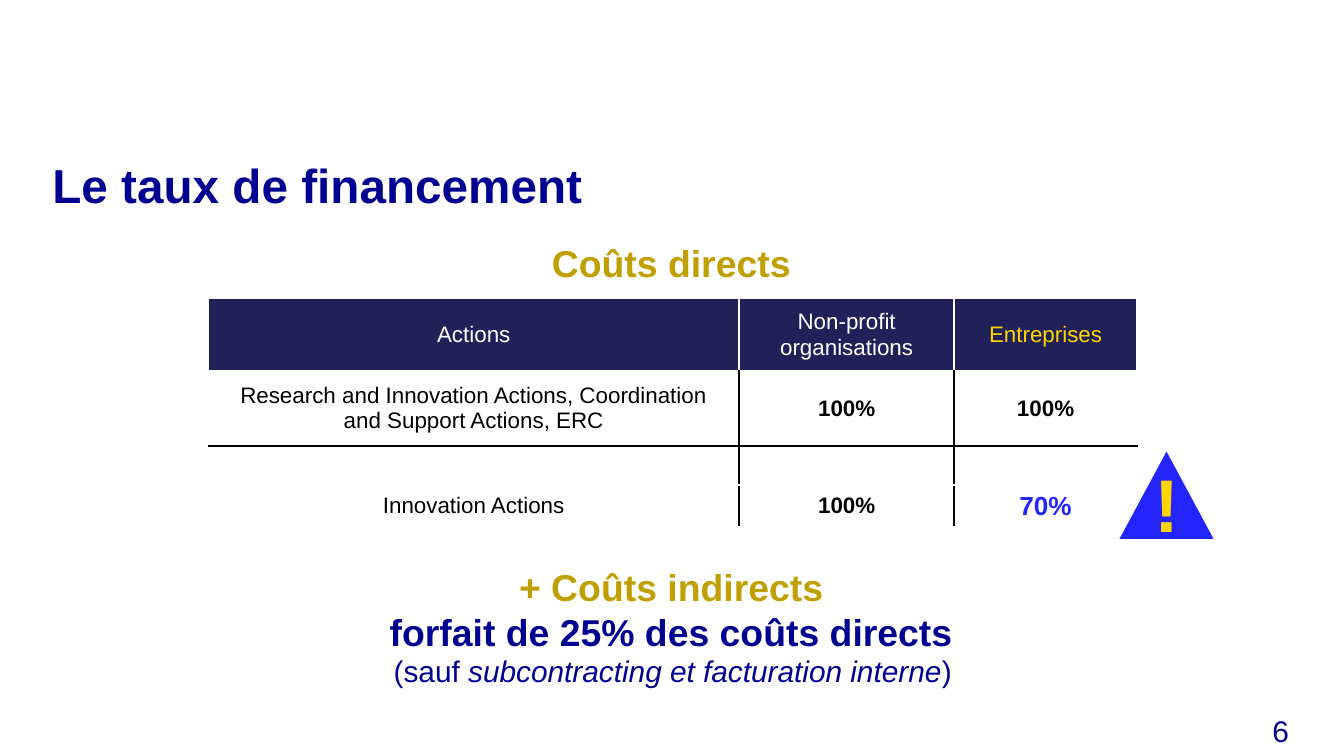
from lxml.etree import SubElement
from pptx import Presentation
from pptx.dml.color import RGBColor
from pptx.enum.shapes import MSO_SHAPE as Shape
from pptx.enum.text import MSO_ANCHOR as Anchor, PP_ALIGN as Align
from pptx.oxml import parse_xml
from pptx.oxml.ns import nsdecls, qn
from pptx.util import Inches, Pt

NAVY = RGBColor(0x00, 0x00, 0x91)
HEADER_NAVY = RGBColor(0x21, 0x21, 0x5A)
BLUE = RGBColor(0x24, 0x24, 0xFF)
YELLOW = RGBColor(0xFF, 0xD5, 0x00)
GOLD = RGBColor(0xBF, 0xA0, 0x00)
WHITE = RGBColor(0xFF, 0xFF, 0xFF)
BLACK = RGBColor(0x00, 0x00, 0x00)

SLIDE_WIDTH = 10
COLUMN_WIDTHS = (3.95, 1.6, 1.36)
ROW_HEIGHTS = (0.54, 0.56, 0.29, 0.31)
RATES = (
    ("Actions", "Non-profit organisations", "Entreprises"),
    ("Research and Innovation Actions, Coordination and Support Actions, ERC",
     "100%", "100%"),
    ("", "", ""),
    ("Innovation Actions", "100%", "70%"),
)


def add_run(paragraph, text, size=12, color=NAVY, bold=False, italic=False):
    run = paragraph.add_run()
    run.text = text
    font = run.font
    font.name = "Arial"
    font.size = Pt(size)
    font.color.rgb = color
    font.bold = bold
    font.italic = italic
    return run


def add_text_box(slide, left, top, width, height, lines, align=Align.CENTER,
                 anchor=Anchor.TOP, line_spacing=1.0):
    frame = slide.shapes.add_textbox(
        Inches(left), Inches(top), Inches(width), Inches(height)).text_frame
    frame.word_wrap = True
    frame.vertical_anchor = anchor
    frame.margin_left = frame.margin_right = 0
    frame.margin_top = frame.margin_bottom = 0
    for index, runs in enumerate(lines):
        paragraph = frame.add_paragraph() if index else frame.paragraphs[0]
        paragraph.alignment = align
        paragraph.line_spacing = line_spacing
        for text, style in runs:
            run = add_run(paragraph, text, **style)
    return run


def outline_text(run, color, width):
    run.font._element.insert(0, parse_xml(
        f'<a:ln {nsdecls("a")} w="{Pt(width)}"><a:solidFill>'
        f'<a:srgbClr val="{color}"/></a:solidFill></a:ln>'))


def set_border(cell, side, color, width=1):
    line = SubElement(cell._tc.get_or_add_tcPr(), qn(f"a:ln{side}"), w=str(Pt(width)))
    fill = SubElement(line, qn("a:solidFill"))
    SubElement(fill, qn("a:srgbClr"), val=str(color))


def style_cell(cell, row, column):
    inner = WHITE if row == 0 else BLACK
    set_border(cell, "L", inner if column > 0 else WHITE)
    set_border(cell, "R", inner if column < len(COLUMN_WIDTHS) - 1 else WHITE)
    set_border(cell, "T", BLACK if row == 2 else WHITE)
    set_border(cell, "B", BLACK if row == 1 else WHITE)
    cell.fill.solid()
    cell.fill.fore_color.rgb = WHITE if row else HEADER_NAVY
    cell.vertical_anchor = Anchor.MIDDLE
    cell.margin_top = cell.margin_bottom = Inches(0.04)


def text_style(row, column, text):
    if row == 0:
        return {"color": YELLOW if column == 2 else WHITE}
    if text == "70%":
        return {"size": 14, "color": BLUE, "bold": True}
    return {"color": BLACK, "bold": column > 0}


def add_rate_table(slide, left, top):
    table = slide.shapes.add_table(
        len(RATES), len(COLUMN_WIDTHS), Inches(left), Inches(top),
        Inches(sum(COLUMN_WIDTHS)), Inches(sum(ROW_HEIGHTS))).table
    for column, width in zip(table.columns, COLUMN_WIDTHS):
        column.width = Inches(width)
    for row, height in zip(table.rows, ROW_HEIGHTS):
        row.height = Inches(height)
    for row, texts in enumerate(RATES):
        for column, text in enumerate(texts):
            cell = table.cell(row, column)
            style_cell(cell, row, column)
            paragraph = cell.text_frame.paragraphs[0]
            paragraph.alignment = Align.CENTER
            if text:
                add_run(paragraph, text, **text_style(row, column, text))
            else:
                paragraph.font.size = Pt(10)


def add_warning(slide, left, top):
    triangle = slide.shapes.add_shape(
        Shape.ISOSCELES_TRIANGLE, Inches(left), Inches(top), Inches(0.7), Inches(0.65))
    triangle.shadow.inherit = False
    triangle.fill.solid()
    triangle.fill.fore_color.rgb = BLUE
    triangle.line.fill.background()
    mark = add_text_box(slide, left, top + 0.05, 0.7, 0.67,
                        [[("!", {"size": 40, "color": YELLOW, "bold": True})]])
    outline_text(mark, GOLD, 1)


def main():
    presentation = Presentation()
    presentation.slide_width = Inches(SLIDE_WIDTH)
    presentation.slide_height = Inches(SLIDE_WIDTH * 9 / 16)
    slide = presentation.slides.add_slide(presentation.slide_layouts[6])

    heading = {"size": 20, "color": GOLD, "bold": True}
    note = {"size": 16}
    add_text_box(slide, 0.39, 1.21, 9.21, 0.58,
                 [[("Le taux de financement", {"size": 25.5, "bold": True})]],
                 align=Align.LEFT, line_spacing=0.9)
    add_text_box(slide, 0.39, 1.79, 9.21, 0.35, [[("Coûts directs", heading)]])
    add_rate_table(slide, 1.55, 2.22)
    add_warning(slide, 8.33, 3.36)
    add_text_box(slide, 0.39, 4.2, 9.21, 0.65, [
        [("+ Coûts indirects", heading)],
        [("forfait de 25% des coûts directs", {"size": 20, "bold": True})],
    ])
    add_text_box(slide, 2.8, 4.86, 4.41, 0.27, [[
        ("(sauf ", note),
        ("subcontracting et facturation interne", {"size": 16, "italic": True}),
        (")", note),
    ]])
    add_text_box(slide, 8.31, 5.25, 1.28, 0.37, [[("6", note)]],
                 align=Align.RIGHT, anchor=Anchor.MIDDLE)
    presentation.save("out.pptx")


if __name__ == "__main__":
    main()
